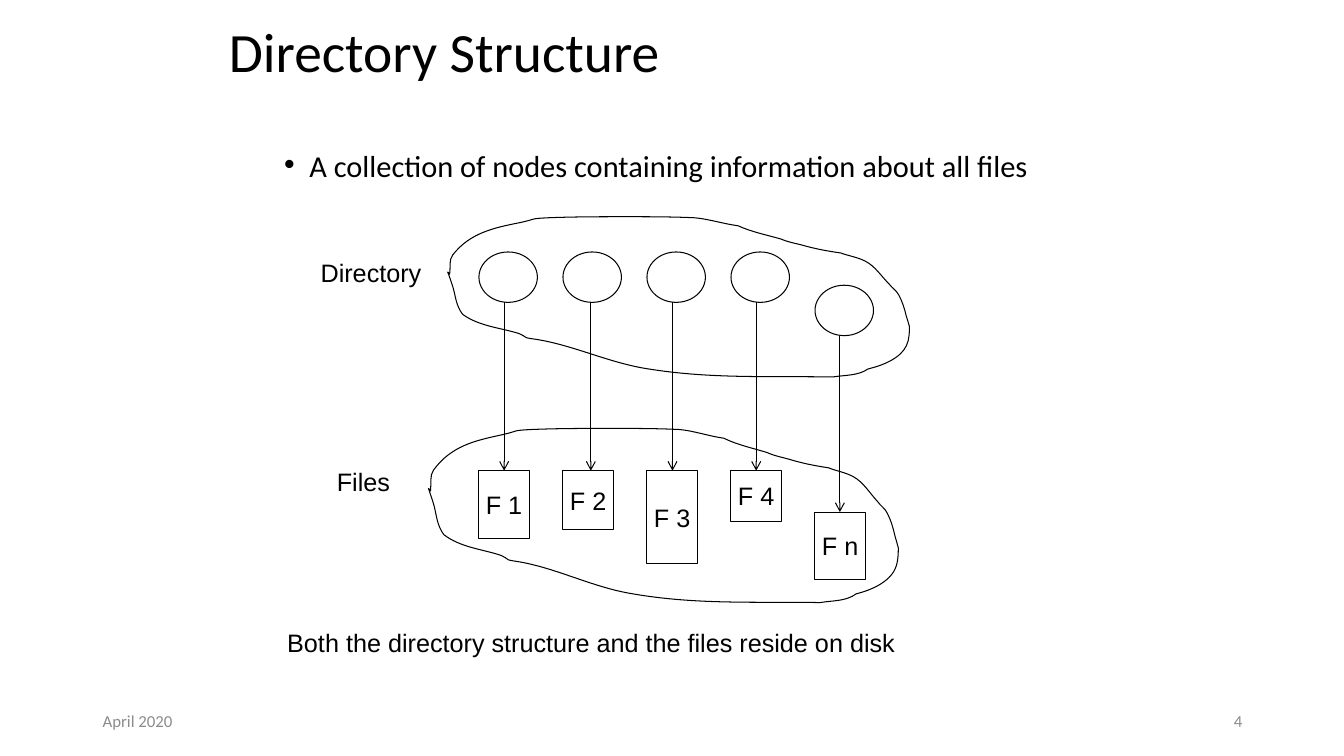
from lxml.etree import SubElement
from pptx import Presentation
from pptx.dml.color import RGBColor
from pptx.enum.shapes import MSO_CONNECTOR, MSO_SHAPE
from pptx.enum.text import MSO_ANCHOR, MSO_AUTO_SIZE, PP_ALIGN
from pptx.oxml.ns import qn
from pptx.util import Inches, Pt

BLACK = RGBColor(0x00, 0x00, 0x00)
WHITE = RGBColor(0xFF, 0xFF, 0xFF)
GRAY = RGBColor(0x8C, 0x8C, 0x8C)

COLUMN_LEFT = 4.75
COLUMN_PITCH = 2.5 / 3
NODE_HEIGHT = 0.5

COLUMNS = [
    ("F 1", 2.5, 4.67, 0.67, 5),
    ("F 2", 2.5, 4.67, 0.58, 5.86),
    ("F 3", 2.5, 4.67, 0.92, 6.67),
    ("F 4", 2.5, 4.67, 0.5, 7.5),
    ("F n", 2.83, 5.08, 0.67, 8.33),
]

CLOUD_BOX = (4.44, 2.15, 4.58, 1.61)
CLOUD_START = (4.46, 2.72)
CLOUD_CURVES = [
    (4.47, 2.65, 4.45, 2.58, 4.49, 2.53),
    (4.66, 2.31, 4.9, 2.26, 5.15, 2.21),
    (5.34, 2.17, 5.24, 2.17, 5.45, 2.16),
    (5.71, 2.15, 5.96, 2.15, 6.21, 2.15),
    (6.43, 2.15, 6.65, 2.15, 6.88, 2.16),
    (7.02, 2.17, 7.17, 2.22, 7.32, 2.24),
    (7.45, 2.3, 7.6, 2.33, 7.74, 2.37),
    (7.81, 2.4, 7.87, 2.41, 7.95, 2.43),
    (8.09, 2.47, 8.2, 2.49, 8.34, 2.51),
    (8.42, 2.54, 8.5, 2.55, 8.58, 2.59),
    (8.68, 2.64, 8.74, 2.74, 8.82, 2.82),
    (8.85, 2.86, 8.89, 2.88, 8.91, 2.92),
    (8.95, 2.99, 8.97, 3.06, 8.99, 3.14),
    (9, 3.17, 9.02, 3.24, 9.02, 3.24),
    (9.02, 3.28, 9.02, 3.37, 8.99, 3.43),
    (8.93, 3.56, 8.74, 3.63, 8.61, 3.66),
    (8.51, 3.73, 8.38, 3.72, 8.26, 3.74),
    (7.62, 3.73, 7.05, 3.76, 6.43, 3.66),
    (6.03, 3.6, 5.66, 3.41, 5.27, 3.36),
    (5.25, 3.36, 5.23, 3.35, 5.22, 3.35),
    (5.2, 3.34, 5.18, 3.32, 5.15, 3.31),
    (4.96, 3.25, 4.76, 3.24, 4.59, 3.12),
    (4.52, 3.03, 4.52, 2.94, 4.49, 2.84),
    (4.49, 2.84, 4.45, 2.72, 4.44, 2.7),
    (4.44, 2.69, 4.45, 2.71, 4.46, 2.72),
]


def write(shape, text, size, font="Arial", color=BLACK, align=PP_ALIGN.LEFT,
          anchor=MSO_ANCHOR.TOP, wrap=True):
    frame = shape.text_frame
    frame.auto_size = MSO_AUTO_SIZE.NONE
    frame.word_wrap = wrap
    frame.vertical_anchor = anchor
    paragraph = frame.paragraphs[0]
    paragraph.alignment = align
    run = paragraph.add_run()
    run.text = text
    run.font.size = Pt(size)
    run.font.name = font
    run.font.color.rgb = color
    return paragraph


def add_title(slide, text):
    title = slide.shapes.title
    title.left, title.top = Inches(2.17), Inches(0.23)
    title.width, title.height = Inches(9), Inches(0.63)
    paragraph = write(title, text, 39.6, "Calibri", anchor=MSO_ANCHOR.MIDDLE)
    paragraph.line_spacing = 0.9


def add_text(slide, box, text, size=18, **style):
    shape = slide.shapes.add_textbox(*map(Inches, box))
    return write(shape, text, size, **style)


def add_bullet(slide, box, text):
    paragraph = add_text(slide, box, text, 21.7, font="Calibri")
    paragraph.line_spacing = 0.7
    properties = paragraph._p.get_or_add_pPr()
    properties.set("marL", str(Inches(0.25)))
    properties.set("indent", str(Inches(-0.25)))
    SubElement(properties, qn("a:buFont")).set("typeface", "Arial")
    SubElement(properties, qn("a:buChar")).set("char", "•")


def outline(shape):
    shape.shadow.inherit = False
    shape.line.color.rgb = BLACK
    shape.line.width = Pt(0.75)


def add_node(slide, kind, box):
    shape = slide.shapes.add_shape(kind, *map(Inches, box))
    shape.fill.solid()
    shape.fill.fore_color.rgb = WHITE
    outline(shape)
    return shape


def add_arrow(slide, x, top, bottom):
    arrow = slide.shapes.add_connector(
        MSO_CONNECTOR.STRAIGHT, Inches(x), Inches(top), Inches(x), Inches(bottom))
    arrow.line.color.rgb = BLACK
    arrow.line.width = Pt(0.75)
    SubElement(arrow.line._get_or_add_ln(), qn("a:tailEnd")).set("type", "arrow")
    SubElement(arrow._element.spPr, qn("a:effectLst"))


def add_cloud(slide, box):
    base_left, base_top, base_width, base_height = CLOUD_BOX
    left, top, width, height = box

    def place(x, y):
        return (Inches(left + (x - base_left) * width / base_width),
                Inches(top + (y - base_top) * height / base_height))

    builder = slide.shapes.build_freeform(*place(*CLOUD_START))
    builder.add_line_segments([place(*curve[4:]) for curve in CLOUD_CURVES], close=True)
    cloud = builder.convert_to_shape()
    cloud.height = Inches(height)
    outline_path = cloud._element.spPr.find(".//" + qn("a:path"))
    outline_path.set("h", str(cloud.height))
    for segment, curve in zip(outline_path.findall(qn("a:lnTo")), CLOUD_CURVES):
        segment.tag = qn("a:cubicBezTo")
        segment.remove(segment[0])
        for x, y in zip(curve[::2], curve[1::2]):
            point_x, point_y = place(x, y)
            point = SubElement(segment, qn("a:pt"))
            point.set("x", str(point_x - cloud.left))
            point.set("y", str(point_y - cloud.top))
    cloud.fill.background()
    outline(cloud)


def add_columns(slide):
    lefts = [COLUMN_LEFT + index * COLUMN_PITCH for index in range(len(COLUMNS))]
    for left, (name, node_top, file_top, file_height, arrow_x) in zip(lefts, COLUMNS):
        add_node(slide, MSO_SHAPE.OVAL, (left, node_top, 0.58, NODE_HEIGHT))
    for left, (name, node_top, file_top, file_height, arrow_x) in zip(lefts, COLUMNS):
        file_box = add_node(slide, MSO_SHAPE.RECTANGLE, (left, file_top, 0.5, file_height))
        write(file_box, name, 18, align=PP_ALIGN.CENTER, anchor=MSO_ANCHOR.MIDDLE, wrap=False)
    for name, node_top, file_top, file_height, arrow_x in COLUMNS:
        add_arrow(slide, arrow_x, node_top + NODE_HEIGHT, file_top)


def main():
    presentation = Presentation()
    presentation.slide_width = Inches(13.33)
    presentation.slide_height = Inches(7.5)
    slide = presentation.slides.add_slide(presentation.slide_layouts[5])

    add_title(slide, "Directory Structure")
    add_bullet(slide, (2.72, 1.51, 8.06, 0.39),
               "A collection of nodes containing information about all files")
    add_columns(slide)
    add_cloud(slide, CLOUD_BOX)
    add_cloud(slide, (4.25, 4.25, 4.66, 1.75))

    label = dict(align=PP_ALIGN.CENTER, anchor=MSO_ANCHOR.MIDDLE, wrap=False)
    add_text(slide, (3.08, 2.5, 1.2, 0.4), "Directory", **label)
    add_text(slide, (3.24, 4.58, 0.73, 0.4), "Files", **label)
    add_text(slide, (2.75, 6.17, 8.31, 0.42),
             "Both the directory structure and the files reside on disk")

    footer = dict(size=12, font="Calibri", color=GRAY, anchor=MSO_ANCHOR.MIDDLE)
    add_text(slide, (9.42, 6.95, 3, 0.4), "4", align=PP_ALIGN.RIGHT, **footer)
    add_text(slide, (0.92, 6.95, 3, 0.4), "April 2020", **footer)
    presentation.save("out.pptx")


if __name__ == "__main__":
    main()
